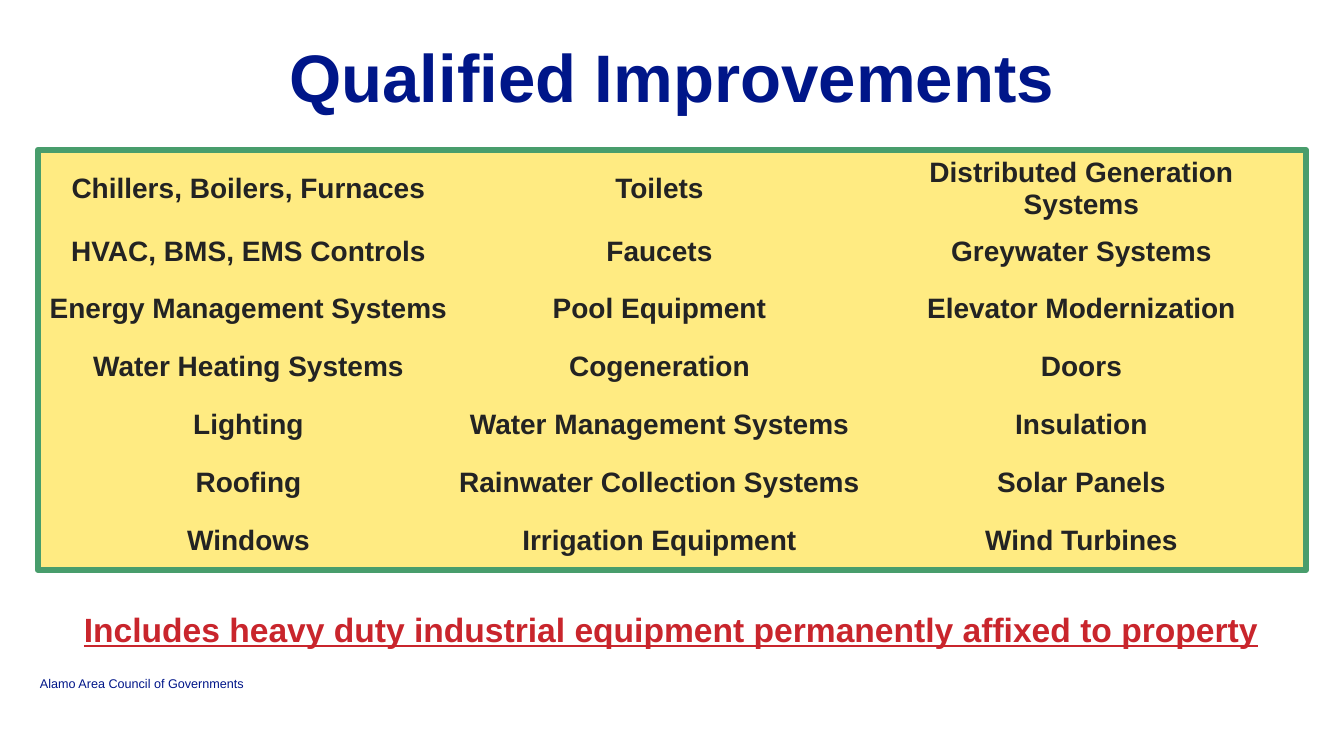
from dataclasses import dataclass

from pptx import Presentation
from pptx.dml.color import RGBColor
from pptx.enum.shapes import MSO_SHAPE
from pptx.enum.text import MSO_ANCHOR, PP_ALIGN
from pptx.oxml.ns import qn
from pptx.slide import Slide
from pptx.util import Emu, Pt

EMU_PER_PX = 914400 / 100.8
FONT = "Arial"
NAVY = RGBColor(0x00, 0x16, 0x89)
INK = RGBColor(0x23, 0x23, 0x23)
RED = RGBColor(0xC9, 0x25, 0x2C)
YELLOW = RGBColor(0xFF, 0xEB, 0x82)
GREEN = RGBColor(0x48, 0x9D, 0x6C)
RECTANGLE = MSO_SHAPE.RECTANGLE
TOP = MSO_ANCHOR.TOP
MIDDLE = MSO_ANCHOR.MIDDLE
CENTER = PP_ALIGN.CENTER
LEFT = PP_ALIGN.LEFT
PLAIN_TABLE_STYLE = "{2D5ABB26-0587-4C30-8999-92F81FD0307C}"


@dataclass(frozen=True)
class TextStyle:
    size: int
    color: RGBColor
    bold: bool = True
    underline: bool = False
    align: PP_ALIGN = CENTER
    line_spacing: float = 1.0


@dataclass(frozen=True)
class Box:
    left: int
    top: int
    width: int
    height: int

    def emu(self) -> tuple[Emu, Emu, Emu, Emu]:
        return px(self.left), px(self.top), px(self.width), px(self.height)


@dataclass(frozen=True)
class Grid:
    left: int
    top: int
    column_widths: tuple[int, ...]
    row_height: int
    rows: tuple[tuple[str, ...], ...]
    style: TextStyle
    anchor: MSO_ANCHOR
    margin_x: int = 0
    margin_y: int = 0


TITLE_STYLE = TextStyle(48, NAVY)
FOOTER_STYLE = TextStyle(9, NAVY, bold=False, align=LEFT)
IMPROVEMENT_STYLE = TextStyle(20, INK)
NOTE_STYLE = TextStyle(24, RED, underline=True, line_spacing=1.3)

PANEL = Box(38, 150, 1268, 420)
TITLE = Box(0, 0, 1344, 151)
FOOTER = Box(30, 671, 227, 25)

IMPROVEMENTS = Grid(
    46, 155, (405, 417, 427), 58,
    (
        ("Chillers, Boilers, Furnaces", "Toilets", "Distributed Generation Systems"),
        ("HVAC, BMS, EMS Controls", "Faucets", "Greywater Systems"),
        ("Energy Management Systems", "Pool Equipment", "Elevator Modernization"),
        ("Water Heating Systems", "Cogeneration", "Doors"),
        ("Lighting", "Water Management Systems", "Insulation"),
        ("Roofing", "Rainwater Collection Systems", "Solar Panels"),
        ("Windows", "Irrigation Equipment", "Wind Turbines"),
    ),
    IMPROVEMENT_STYLE, MIDDLE,
)
NOTE = Grid(
    46, 581, (1250,), 74,
    (("Includes heavy duty industrial equipment permanently affixed to property",),),
    NOTE_STYLE, TOP, margin_x=10, margin_y=20,
)


def px(length: int) -> Emu:
    return Emu(round(length * EMU_PER_PX))


def write_text(text_frame, text: str, style: TextStyle) -> None:
    text_frame.text = text
    paragraph = text_frame.paragraphs[0]
    paragraph.alignment = style.align
    paragraph.line_spacing = style.line_spacing
    font = paragraph.runs[0].font
    font.name = FONT
    font.size = Pt(style.size)
    font.bold = style.bold
    font.underline = style.underline
    font.color.rgb = style.color


def set_margins(target, horizontal: int, vertical: int) -> None:
    target.margin_left = target.margin_right = px(horizontal)
    target.margin_top = target.margin_bottom = px(vertical)


def draw_panel(slide: Slide) -> None:
    panel = slide.shapes.add_shape(RECTANGLE, *PANEL.emu())
    panel.shadow.inherit = False
    panel.fill.solid()
    panel.fill.fore_color.rgb = YELLOW
    panel.line.color.rgb = GREEN
    panel.line.width = Pt(4.5)


def draw_title(slide: Slide) -> None:
    text_frame = slide.shapes.add_textbox(*TITLE.emu()).text_frame
    text_frame.word_wrap = True
    text_frame.vertical_anchor = MIDDLE
    set_margins(text_frame, 0, 0)
    write_text(text_frame, "Qualified Improvements", TITLE_STYLE)


def draw_footer(slide: Slide) -> None:
    text_frame = slide.shapes.add_textbox(*FOOTER.emu()).text_frame
    text_frame.word_wrap = False
    write_text(text_frame, "Alamo Area Council of Governments", FOOTER_STYLE)


def draw_grid(slide: Slide, grid: Grid) -> None:
    box = Box(grid.left, grid.top, sum(grid.column_widths), grid.row_height * len(grid.rows))
    frame = slide.shapes.add_table(len(grid.rows), len(grid.column_widths), *box.emu())
    table = frame.table
    table.first_row = False
    table.horz_banding = False
    style_id = next(frame.element.iter(qn("a:tableStyleId")))
    style_id.text = PLAIN_TABLE_STYLE
    for column, width in zip(table.columns, grid.column_widths):
        column.width = px(width)
    for row, texts in zip(table.rows, grid.rows):
        row.height = px(grid.row_height)
        for cell, text in zip(row.cells, texts):
            cell.fill.background()
            cell.vertical_anchor = grid.anchor
            set_margins(cell, grid.margin_x, grid.margin_y)
            write_text(cell.text_frame, text, grid.style)


def main() -> None:
    presentation = Presentation()
    presentation.slide_width = px(1344)
    presentation.slide_height = px(756)
    slide = presentation.slides.add_slide(presentation.slide_layouts[6])
    draw_panel(slide)
    draw_footer(slide)
    draw_title(slide)
    for grid in (IMPROVEMENTS, NOTE):
        draw_grid(slide, grid)
    presentation.save("out.pptx")


if __name__ == "__main__":
    main()
